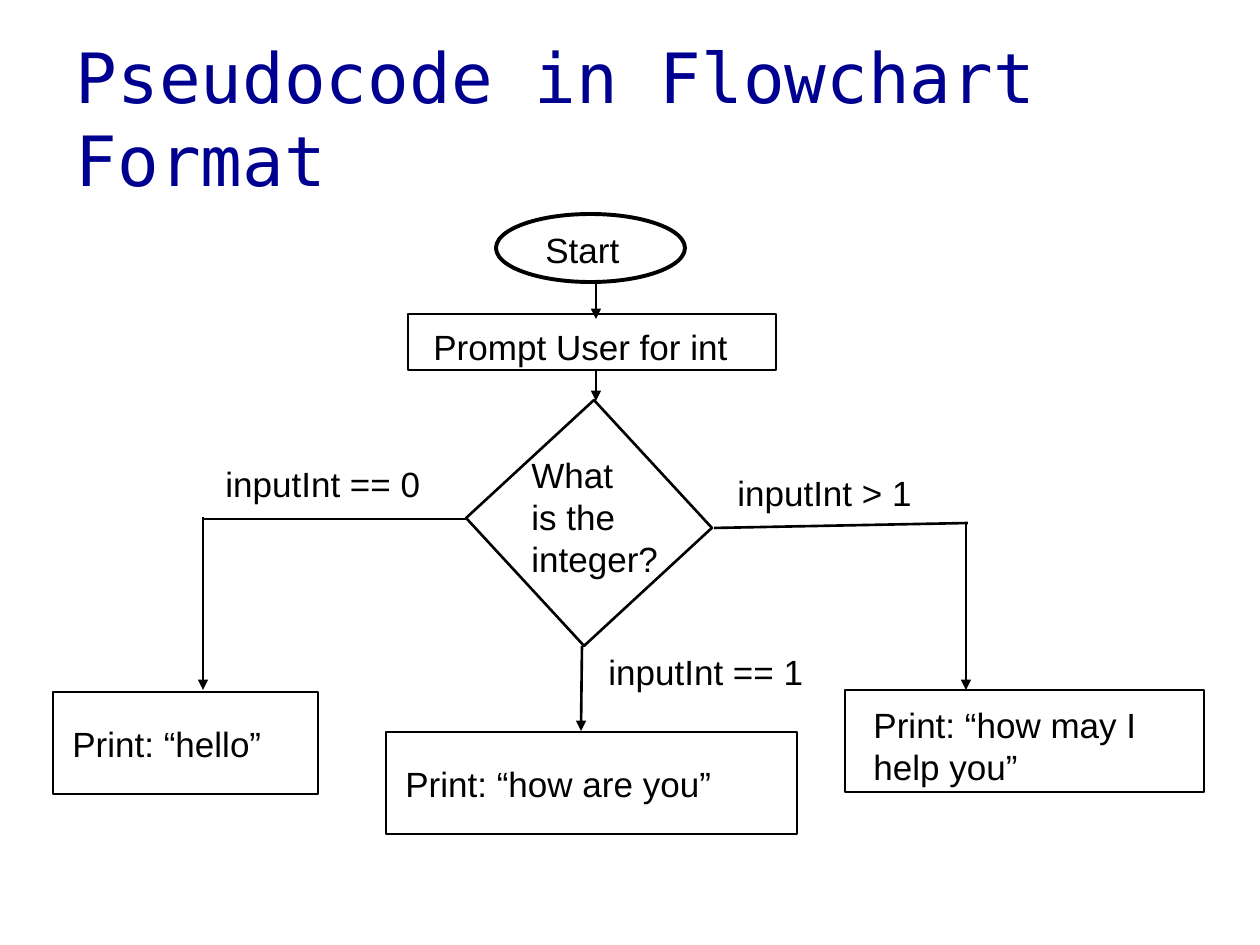
from dataclasses import dataclass

from lxml import etree
from pptx import Presentation
from pptx.dml.color import RGBColor
from pptx.enum.shapes import MSO_CONNECTOR, MSO_SHAPE
from pptx.enum.text import MSO_ANCHOR, MSO_AUTO_SIZE, PP_ALIGN
from pptx.oxml.ns import qn
from pptx.slide import Slide
from pptx.text.text import TextFrame
from pptx.util import Emu, Pt

RECTANGLE, ELLIPSE = MSO_SHAPE.RECTANGLE, MSO_SHAPE.OVAL
STRAIGHT = MSO_CONNECTOR.STRAIGHT
LEFT, TOP, MIDDLE = PP_ALIGN.LEFT, MSO_ANCHOR.TOP, MSO_ANCHOR.MIDDLE
NO_AUTOFIT = MSO_AUTO_SIZE.NONE
TITLE_ONLY = 5
PX_PER_INCH = 126


@dataclass(frozen=True)
class Theme:
    title_font: str = "DejaVu Sans Mono"
    title_size: float = 39.6
    title_color: RGBColor = RGBColor(0x00, 0x00, 0x90)
    body_font: str = "Arial"
    body_size: float = 20
    ink: RGBColor = RGBColor(0x00, 0x00, 0x00)
    line_width: float = 1.5
    start_line_width: float = 2.25


THEME = Theme()


@dataclass(frozen=True)
class Box:
    left: int
    top: int
    width: int
    height: int


@dataclass(frozen=True)
class Node:
    box: Box
    kind: MSO_SHAPE = RECTANGLE
    line_width: float = THEME.line_width
    rotation: float = 0


@dataclass(frozen=True)
class Label:
    box: Box
    paragraphs: tuple[str, ...]


@dataclass(frozen=True)
class Link:
    start: tuple[int, int]
    end: tuple[int, int]
    arrow: bool = True


TITLE = Label(Box(63, 38, 1134, 158), ("Pseudocode in Flowchart Format",))

NODES = (
    Node(Box(496, 214, 189, 68), ELLIPSE, THEME.start_line_width),
    Node(Box(408, 314, 368, 56)),
    Node(Box(502, 436, 174, 174), rotation=47.3),  # decision
    Node(Box(53, 692, 265, 102)),
    Node(Box(386, 732, 411, 102)),
    Node(Box(845, 690, 359, 102)),
)

LINKS = (
    Link((596, 282), (596, 319)),
    Link((596, 370), (596, 401)),
    Link((467, 519), (203, 519), arrow=False),
    Link((203, 517), (203, 690)),
    Link((714, 528), (968, 523), arrow=False),
    Link((966, 524), (966, 690)),
    Link((582, 646), (581, 731)),
)

LABELS = (
    Label(Box(533, 222, 111, 54), ("Start",)),
    Label(Box(421, 319, 350, 54), ("Prompt User for int",)),
    Label(Box(519, 447, 194, 139), ("What", "is the integer?")),
    Label(Box(213, 456, 248, 54), ("inputInt == 0",)),
    Label(Box(596, 644, 248, 54), ("inputInt == 1",)),
    Label(Box(725, 465, 301, 54), ("inputInt > 1",)),
    Label(Box(60, 716, 238, 54), ("Print: “hello”",)),
    Label(Box(393, 756, 370, 54), ("Print: “how are you”",)),
    Label(Box(861, 697, 319, 97), ("Print: “how may I help you”",)),
)


def px(length: int) -> Emu:
    return Emu(round(length * 914400 / PX_PER_INCH))


def place(box: Box) -> tuple[Emu, Emu, Emu, Emu]:
    return px(box.left), px(box.top), px(box.width), px(box.height)


def write(frame: TextFrame, paragraphs: tuple[str, ...], font: str,
          size: float, color: RGBColor, anchor: MSO_ANCHOR) -> None:
    frame.word_wrap = True
    frame.auto_size = NO_AUTOFIT
    frame.vertical_anchor = anchor
    for index, text in enumerate(paragraphs):
        paragraph = frame.add_paragraph() if index else frame.paragraphs[0]
        paragraph.alignment = LEFT
        run = paragraph.add_run()
        run.text = text
        run.font.name = font
        run.font.size = Pt(size)
        run.font.color.rgb = color


def draw_title(slide: Slide, label: Label) -> None:
    title = slide.shapes.title
    title.left, title.top, title.width, title.height = place(label.box)
    write(title.text_frame, label.paragraphs, THEME.title_font,
          THEME.title_size, THEME.title_color, MIDDLE)


def draw_node(slide: Slide, node: Node) -> None:
    shape = slide.shapes.add_shape(node.kind, *place(node.box))
    shape.rotation = node.rotation
    shape.shadow.inherit = False
    shape.fill.background()
    shape.line.color.rgb = THEME.ink
    shape.line.width = Pt(node.line_width)


def draw_link(slide: Slide, link: Link) -> None:
    ends = [px(value) for value in link.start + link.end]
    connector = slide.shapes.add_connector(STRAIGHT, *ends)
    connector.line.color.rgb = THEME.ink
    connector.line.width = Pt(THEME.line_width)
    properties = connector._element.spPr
    if link.arrow:
        outline = properties.find(qn("a:ln"))
        etree.SubElement(outline, qn("a:tailEnd"), type="triangle")
    etree.SubElement(properties, qn("a:effectLst"))


def draw_label(slide: Slide, label: Label) -> None:
    text_box = slide.shapes.add_textbox(*place(label.box))
    write(text_box.text_frame, label.paragraphs, THEME.body_font,
          THEME.body_size, THEME.ink, TOP)


def main() -> None:
    presentation = Presentation()
    presentation.slide_width, presentation.slide_height = px(1260), px(945)
    slide = presentation.slides.add_slide(presentation.slide_layouts[TITLE_ONLY])

    # Heading
    draw_title(slide, TITLE)

    # Flowchart: outlines, connections, wording
    for node in NODES:
        draw_node(slide, node)
    for link in LINKS:
        draw_link(slide, link)
    for label in LABELS:
        draw_label(slide, label)

    presentation.save("out.pptx")


if __name__ == "__main__":
    main()
